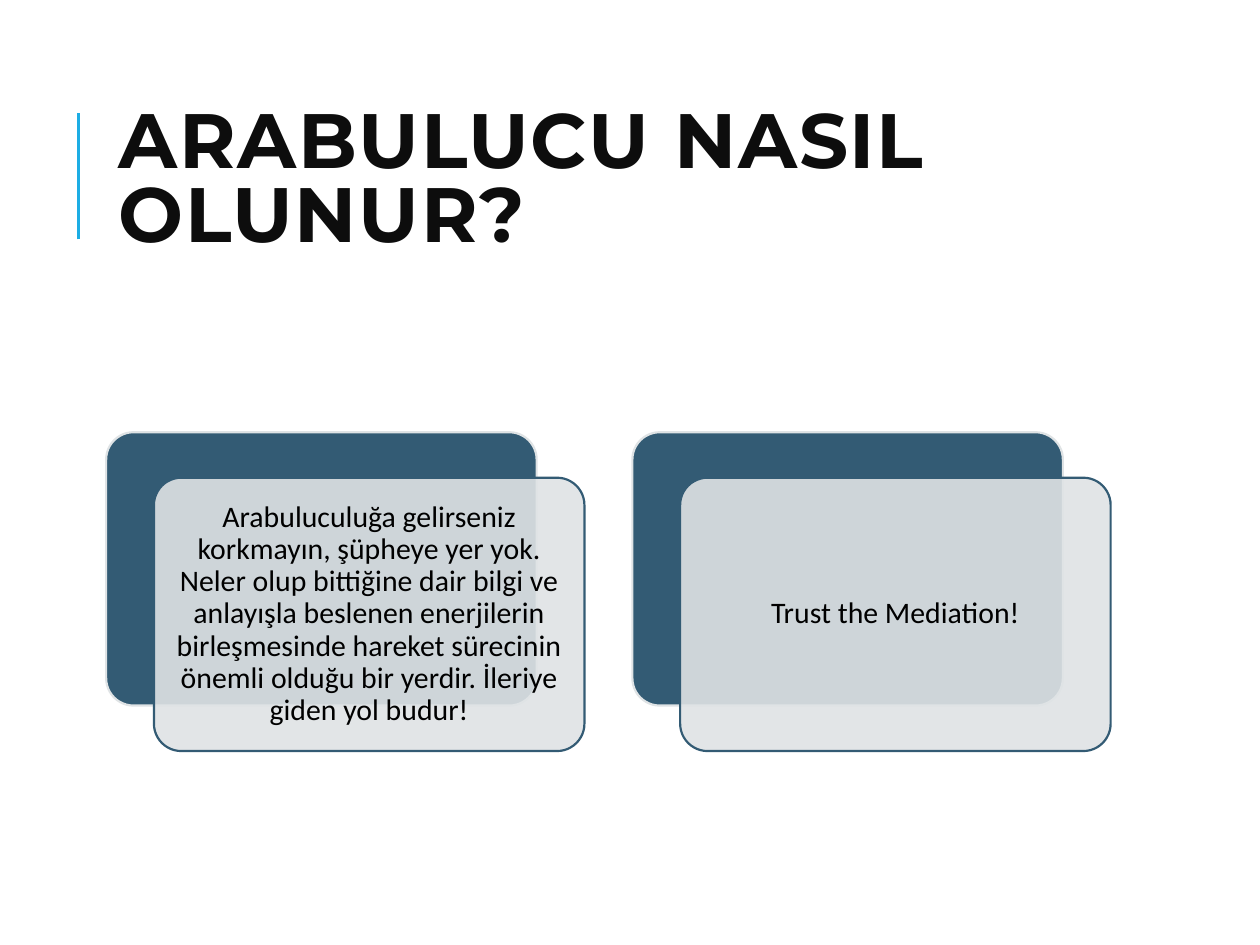
"""Build the slide on becoming a mediator: a title and two layered cards."""
import pptx
import pptx.dml.color
import pptx.enum.shapes
import pptx.enum.text
import pptx.oxml
import pptx.oxml.ns
import pptx.util

Pt = pptx.util.Pt
RGBColor = pptx.dml.color.RGBColor
MSO_SHAPE = pptx.enum.shapes.MSO_SHAPE
PP_ALIGN = pptx.enum.text.PP_ALIGN
MSO_ANCHOR = pptx.enum.text.MSO_ANCHOR

TITLE = "ARABULUCU NASIL OLUNUR?"
CARDS = [
    "Arabuluculuğa gelirseniz korkmayın, şüpheye yer yok. Neler olup bittiğine "
    "dair bilgi ve anlayışla beslenen enerjilerin birleşmesinde hareket sürecinin "
    "önemli olduğu bir yerdir. İleriye giden yol budur!",
    "Trust the Mediation!",
]

ACCENT = RGBColor(0x1C, 0xAD, 0xE4)
TITLE_INK = RGBColor(0x0D, 0x0D, 0x0D)
NAVY = RGBColor(0x33, 0x5B, 0x74)
MIST = RGBColor(0xDF, 0xE3, 0xE5)
BLACK = RGBColor(0, 0, 0)

CARD_LEFT, CARD_TOP = 60.7, 247
CARD_WIDTH, CARD_HEIGHT = 246, 156.2
CARD_STEP = 300.7
FRONT_SHIFT_X, FRONT_SHIFT_Y = 27.3, 26
TEXT_INSET = 5


def make_element(tag, **attributes):
    element = pptx.oxml.parse_xml(f"<{tag} {pptx.oxml.ns.nsdecls('a')}/>")
    for name, value in attributes.items():
        element.set(name, value)
    return element


def add_panel(page, left, top, fill, line):
    panel = page.shapes.add_shape(
        MSO_SHAPE.ROUNDED_RECTANGLE, Pt(left), Pt(top), Pt(CARD_WIDTH), Pt(CARD_HEIGHT)
    )
    panel.adjustments[0] = 0.1
    panel.shadow.inherit = False
    panel.fill.solid()
    panel.fill.fore_color.rgb = fill
    panel.line.color.rgb = line
    panel.line.width = Pt(1.25)
    return panel


def write_text(box, text, font, size, color, align, spacing):
    frame = box.text_frame
    frame.word_wrap = True
    frame.auto_size = pptx.enum.text.MSO_AUTO_SIZE.NONE
    frame.vertical_anchor = MSO_ANCHOR.MIDDLE
    para = frame.paragraphs[0]
    para.alignment = align
    para.line_spacing = spacing
    span = para.add_run()
    span.text = text
    span.font.name = font
    span.font.size = Pt(size)
    span.font.color.rgb = color
    return span


def add_title(page):
    rule = page.shapes.add_connector(
        pptx.enum.shapes.MSO_CONNECTOR.STRAIGHT, Pt(44.8), Pt(136.8), Pt(44.8), Pt(64.8)
    )
    rule.line.color.rgb = ACCENT
    rule.line.width = Pt(1.5)
    rule._element.spPr.append(make_element("a:effectLst"))

    title = page.shapes.title
    title.left, title.top, title.width, title.height = Pt(60.5), Pt(46), Pt(574), Pt(118)
    span = write_text(title, TITLE, "Montserrat", 44, TITLE_INK, PP_ALIGN.LEFT, 0.8)
    span.font.bold = True
    span.font._element.set("spc", "100")


def add_card(page, left, text):
    add_panel(page, left, CARD_TOP, NAVY, MIST)
    front = add_panel(page, left + FRONT_SHIFT_X, CARD_TOP + FRONT_SHIFT_Y, MIST, NAVY)
    color = front._element.spPr.find(pptx.oxml.ns.qn("a:solidFill"))[0]
    color.append(make_element("a:alpha", val="90000"))
    frame = front.text_frame
    frame.margin_left = frame.margin_right = Pt(TEXT_INSET)
    frame.margin_top = frame.margin_bottom = Pt(TEXT_INSET)
    write_text(front, text, "Calibri", 17, BLACK, PP_ALIGN.CENTER, 0.9)


def main():
    deck = pptx.Presentation()
    deck.slide_width, deck.slide_height = Pt(720), Pt(540)
    page = deck.slides.add_slide(deck.slide_layouts.get_by_name("Title Only"))
    add_title(page)
    for index, text in enumerate(CARDS):
        add_card(page, CARD_LEFT + index * CARD_STEP, text)
    deck.save("out.pptx")


if __name__ == "__main__":
    main()
